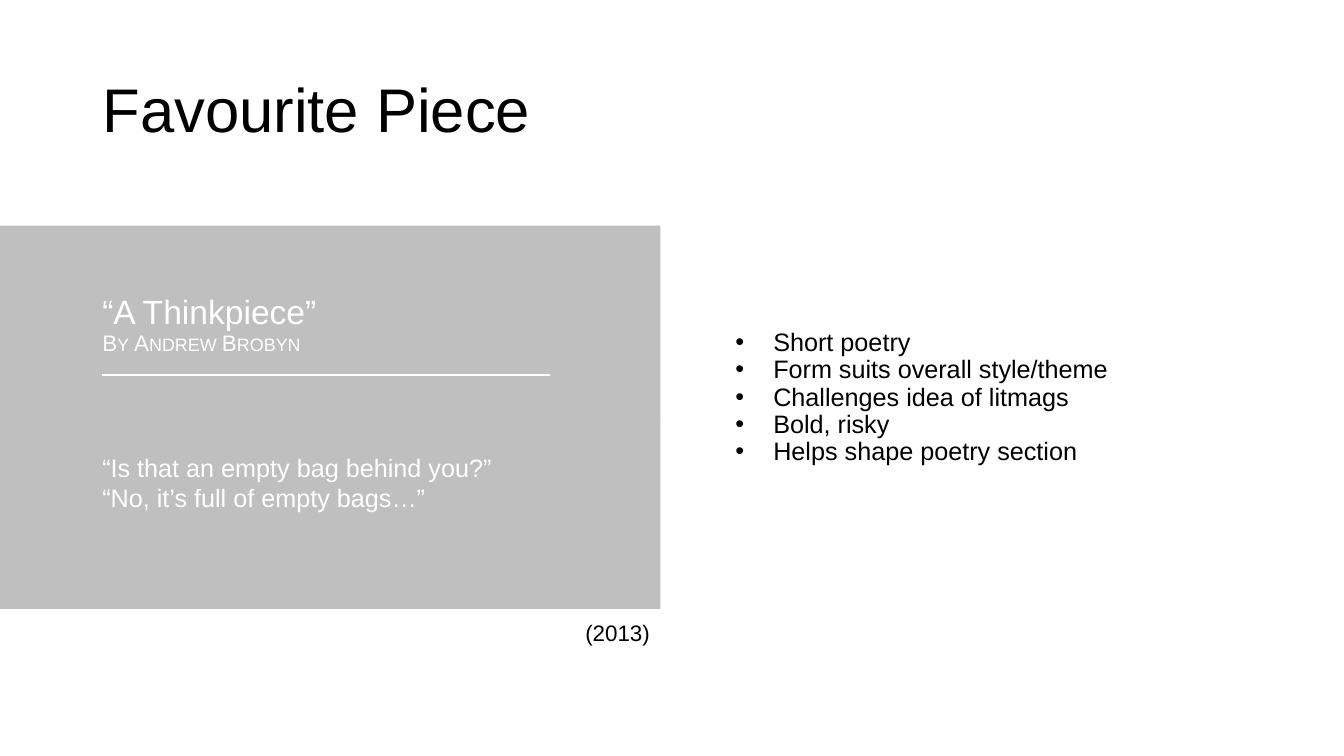
"""Build the Favourite Piece slide about a short poem."""
from lxml import etree
from pptx import Presentation, util as u
from pptx.dml.color import RGBColor
from pptx.enum import shapes, text
from pptx.oxml import ns

PX = 9525
FONT = "Arial"
BLACK = RGBColor(0, 0, 0)
WHITE = RGBColor(255, 255, 255)
GREY = RGBColor(0xBF, 0xBF, 0xBF)
BULLET_INDENT = 36


def px(*lengths):
    """Turn pixel lengths into EMU."""
    return [u.Emu(n * PX) for n in lengths]


def add_panel(s, box):
    """Add a flat grey rectangle."""
    sp = s.shapes.add_shape(shapes.MSO_SHAPE.RECTANGLE, *px(*box))
    sp.shadow.inherit = False
    sp.fill.solid()
    sp.fill.fore_color.rgb = GREY
    sp.line.fill.background()


def add_rule(s, x1, x2, y):
    """Add a thin white horizontal line."""
    sp = s.shapes.add_connector(shapes.MSO_CONNECTOR.STRAIGHT, *px(x1, y, x2, y))
    sp.line.color.rgb = WHITE
    sp.line.width = u.Pt(1)
    etree.SubElement(sp._element.spPr, ns.qn("a:effectLst"))


def add_bullet(p):
    """Give a paragraph a hanging round bullet."""
    pPr = p._p.get_or_add_pPr()
    pPr.set("marL", str(BULLET_INDENT * PX))
    pPr.set("indent", str(-BULLET_INDENT * PX))
    etree.SubElement(pPr, ns.qn("a:buFont")).set("typeface", FONT)
    etree.SubElement(pPr, ns.qn("a:buChar")).set("char", "•")


def fill_text(sp, lines, size, color, spacing=1.0, bullets=False, small_caps=False):
    """Write one paragraph per line in a vertically centred frame."""
    tf = sp.text_frame
    frame_format = {
        "word_wrap": True,
        "auto_size": text.MSO_AUTO_SIZE.NONE,
        "vertical_anchor": text.MSO_ANCHOR.MIDDLE,
    }
    for name, value in frame_format.items():
        setattr(tf, name, value)
    for i, line in enumerate(lines):
        p = tf.add_paragraph() if i else tf.paragraphs[0]
        if bullets:
            add_bullet(p)
        p.alignment = text.PP_ALIGN.LEFT
        p.line_spacing = spacing
        r = p.add_run()
        r.text = line
        for name, value in {"name": FONT, "size": u.Pt(size)}.items():
            setattr(r.font, name, value)
        r.font.color.rgb = color
        if small_caps:
            r._r.get_or_add_rPr().set("cap", "small")


def add_text(s, box, lines, size, color, **options):
    """Add a text box holding the given lines."""
    fill_text(s.shapes.add_textbox(*px(*box)), lines, size, color, **options)


def add_title(s, box, title):
    """Place and format the title placeholder."""
    sp = s.shapes.title
    for name, value in zip(("left", "top", "width", "height"), px(*box)):
        setattr(sp, name, value)
    fill_text(sp, [title], 44, BLACK, spacing=0.9)


def main():
    """Draw the slide and save it."""
    prs = Presentation()
    prs.slide_width, prs.slide_height = px(1280, 720)
    s = prs.slides.add_slide(prs.slide_layouts[5])

    for top in (397, 215):
        add_panel(s, (0, top, 629, 183))
    add_title(s, (88, 38, 1104, 139), "Favourite Piece")
    add_text(s, (88, 273, 258, 51), ["“A Thinkpiece”"], 24, WHITE, spacing=0.9)
    add_text(s, (88, 302, 258, 51), ["By Andrew Brobyn"], 16, WHITE,
             spacing=0.9, small_caps=True)
    add_rule(s, 524, 97, 357)
    add_text(s, (88, 420, 1104, 79),
             ["“Is that an empty bag behind you?”", "“No, it’s full of empty bags…”"],
             18, WHITE)
    reasons = ["Short poetry", "Form suits overall style/theme",
               "Challenges idea of litmags", "Bold, risky",
               "Helps shape poetry section"]
    add_text(s, (691, 302, 473, 154), reasons, 18, BLACK, spacing=0.9, bullets=True)
    add_text(s, (548, 563, 90, 79), ["(2013)"], 16, BLACK)

    prs.save("out.pptx")


if __name__ == "__main__":
    main()
